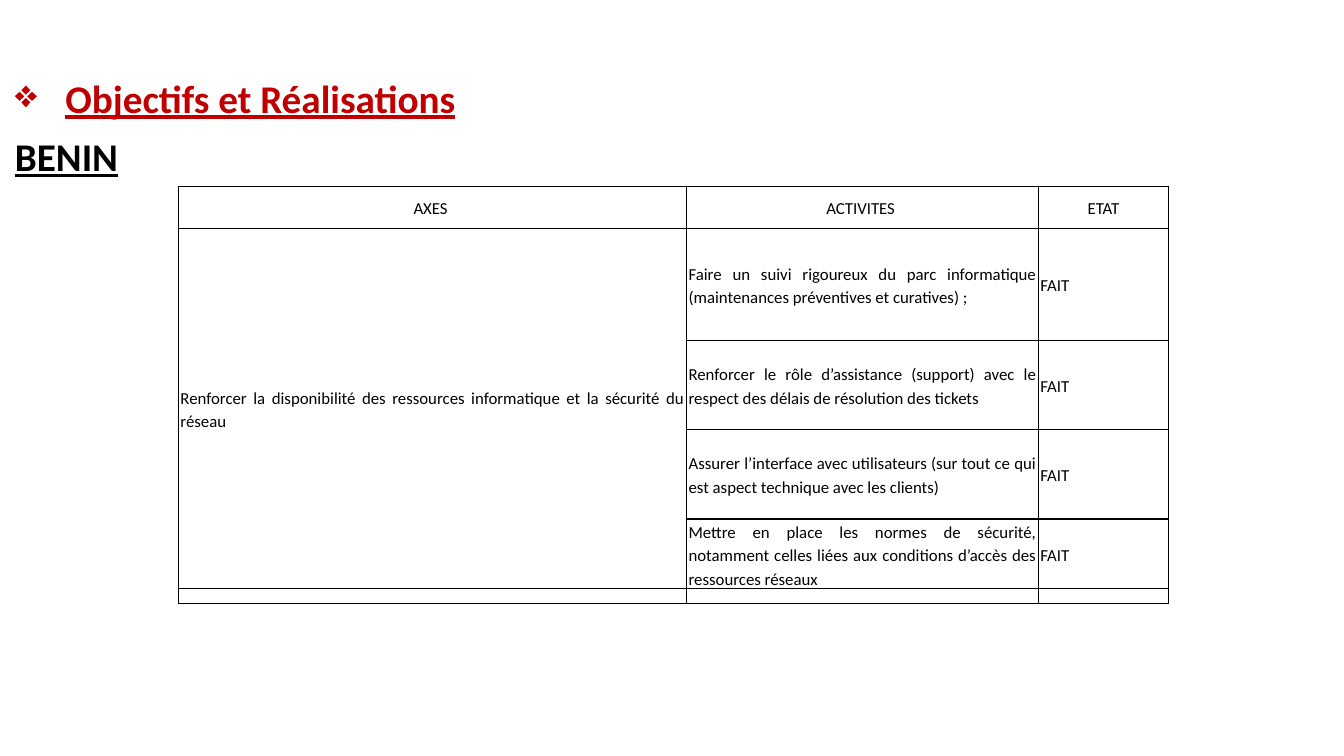
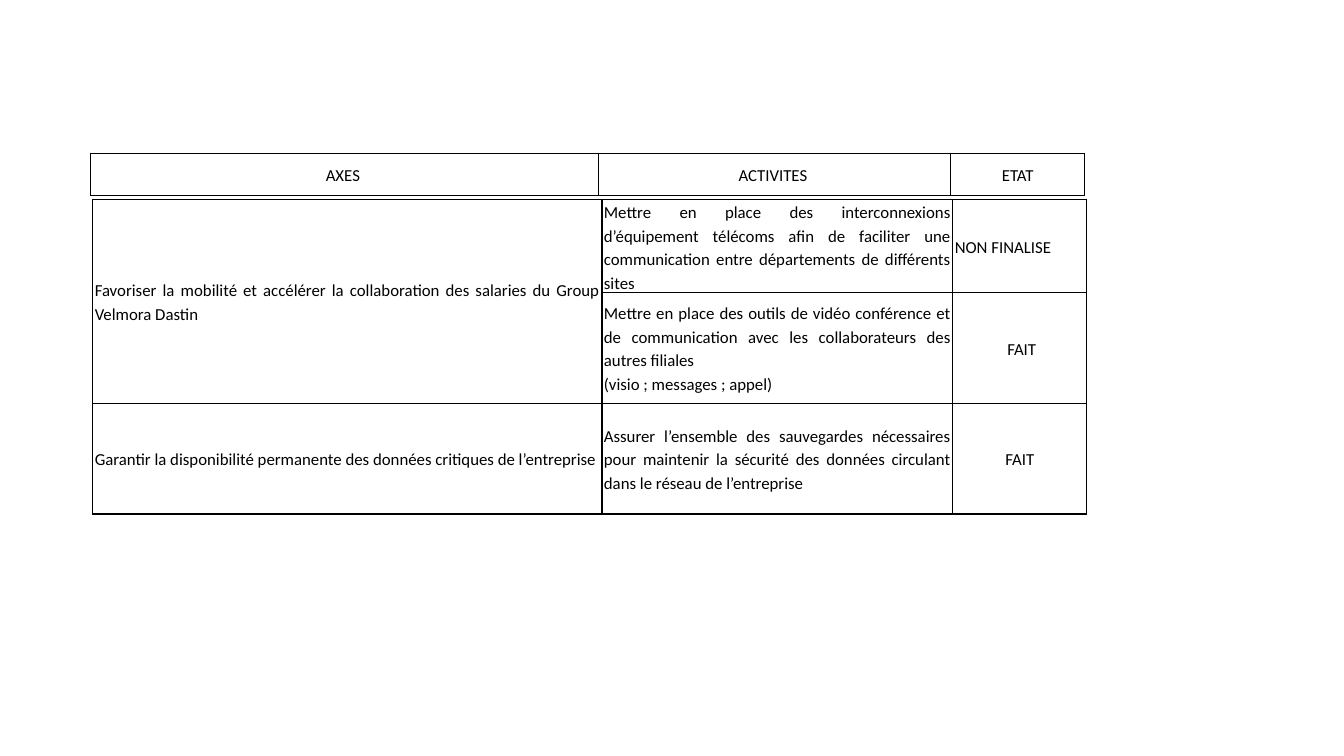
import pptx
import pptx.util
import pptx.dml.color
import pptx.enum.text
import pptx.oxml.ns
import lxml.etree

Inches = pptx.util.Inches
Pt = pptx.util.Pt
ALIGN = pptx.enum.text.PP_ALIGN
MIDDLE = pptx.enum.text.MSO_ANCHOR.MIDDLE
qn = pptx.oxml.ns.qn

BLACK = pptx.dml.color.RGBColor(0x00, 0x00, 0x00)
RED = pptx.dml.color.RGBColor(0xC0, 0x00, 0x00)
FONT = "Calibri"
HEADER = ["AXES ", "ACTIVITES ", "ETAT"]
HEADER_HEIGHT = 0.42


def write(para, text, size=12, color=BLACK, bold=False, underline=False,
          align=None, spacing=1.15):
    para.alignment = align
    para.line_spacing = spacing
    span = para.add_run()
    span.text = text
    font = span.font
    font.name, font.size, font.bold, font.underline = FONT, Pt(size), bold, underline
    font.color.rgb = color


def add_bullet(para, char, indent):
    props = para._p.get_or_add_pPr()
    props.set("marL", str(Inches(indent)))
    props.set("indent", str(-Inches(indent)))
    lxml.etree.SubElement(props, qn("a:buChar"), char=char)


def add_borders(cell, color=BLACK, width=1):
    props = cell._tc.get_or_add_tcPr()
    for side in ("lnL", "lnR", "lnT", "lnB"):
        line = lxml.etree.SubElement(props, qn(f"a:{side}"), w=str(Pt(width)))
        fill = lxml.etree.SubElement(line, qn("a:solidFill"))
        lxml.etree.SubElement(fill, qn("a:srgbClr"), val=str(color))


class Deck:
    def __init__(self):
        self.file = pptx.Presentation()
        self.file.slide_width = Inches(13.33)
        self.file.slide_height = Inches(7.5)
        self.page = None

    def add_page(self):
        self.page = self.file.slides.add_slide(self.file.slide_layouts[6])

    def heading(self, text, top, width, color=BLACK, bullet=None):
        box = self.page.shapes.add_textbox(
            Inches(0.05), Inches(top), Inches(width), Inches(0.79))
        frame = box.text_frame
        frame.word_wrap = True
        frame.vertical_anchor = MIDDLE
        para = frame.paragraphs[0]
        if bullet:
            add_bullet(para, bullet, 0.5)
        write(para, text, size=28, color=color, bold=True, underline=True, spacing=0.9)

    def table(self, left, top, widths, heights, rows, merged=None, centered=()):
        """Draw rows of text; merged is (first row, last row) of column 0."""
        table = self.page.shapes.add_table(
            len(rows), len(widths), Inches(left), Inches(top),
            Inches(sum(widths)), Inches(sum(heights))).table
        table.first_row = table.horz_banding = False
        for column, width in zip(table.columns, widths):
            column.width = Inches(width)
        for row, height in zip(table.rows, heights):
            row.height = Inches(height)
        for r, texts in enumerate(rows):
            for c, text in enumerate(texts):
                centre = texts is HEADER or (r, c) in centered
                self.cell(table.cell(r, c), text,
                          ALIGN.CENTER if centre else ALIGN.JUSTIFY)
        if merged:
            first, last = merged
            table.cell(first, 0).merge(table.cell(last, 0))

    def cell(self, cell, text, align):
        cell.margin_left = cell.margin_right = Inches(0.02)
        cell.margin_top = cell.margin_bottom = 0
        cell.vertical_anchor = MIDDLE
        add_borders(cell)
        cell.fill.background()
        frame = cell.text_frame
        for number, line in enumerate(text.split("\n")):
            para = frame.add_paragraph() if number else frame.paragraphs[0]
            if line:
                write(para, line, align=align)
            else:
                # keeps an empty row thin
                lxml.etree.SubElement(para._p, qn("a:endParaRPr"), sz="800")

    def save(self):
        self.file.save("out.pptx")


def main():
    deck = Deck()

    deck.add_page()
    deck.heading("BENIN", 1.18, 2.92)
    deck.table(1.77, 1.85, [5.04, 3.49, 1.29],
               [HEADER_HEIGHT, 1.11, 0.88, 0.89, 0.69, 0.15], [
        HEADER,
        ["Renforcer la disponibilité des ressources informatique et la sécurité du réseau",
         "Faire un suivi rigoureux du parc informatique (maintenances préventives et "
         "curatives) ;", "FAIT"],
        ["", "Renforcer le rôle d’assistance (support) avec le respect des délais de "
         "résolution des tickets", "FAIT"],
        ["", "Assurer l’interface avec utilisateurs (sur tout ce qui est aspect technique "
         "avec les clients)", "FAIT"],
        ["", "Mettre en place les normes de sécurité, notamment celles liées aux conditions "
         "d’accès des ressources réseaux", "FAIT"],
        ["", "", ""],
    ], merged=(1, 4))
    deck.heading("Objectifs et Réalisations", 0.6, 5.69, color=RED, bullet="❖")

    deck.add_page()
    deck.table(0.92, 1.98, [5.05, 3.48, 1.33], [0.92, 1.1, 1.1], [
        ["Favoriser la mobilité et accélérer la collaboration des salaries du Group "
         "Velmora Dastin",
         "Mettre en place des interconnexions d’équipement télécoms afin de faciliter une "
         "communication entre départements de différents sites", "NON FINALISE"],
        ["", "Mettre en place des outils de vidéo conférence et de communication avec les "
         "collaborateurs des autres filiales\n(visio ; messages ; appel)", " FAIT"],
        ["Garantir la disponibilité permanente des données critiques de l’entreprise",
         "Assurer l’ensemble des sauvegardes nécessaires pour maintenir la sécurité des "
         "données circulant dans le réseau de l’entreprise", "FAIT"],
    ], merged=(0, 1), centered=[(1, 2), (2, 2)])
    deck.table(0.9, 1.52, [5.04, 3.49, 1.33], [HEADER_HEIGHT], [HEADER])

    deck.save()


if __name__ == "__main__":
    main()
